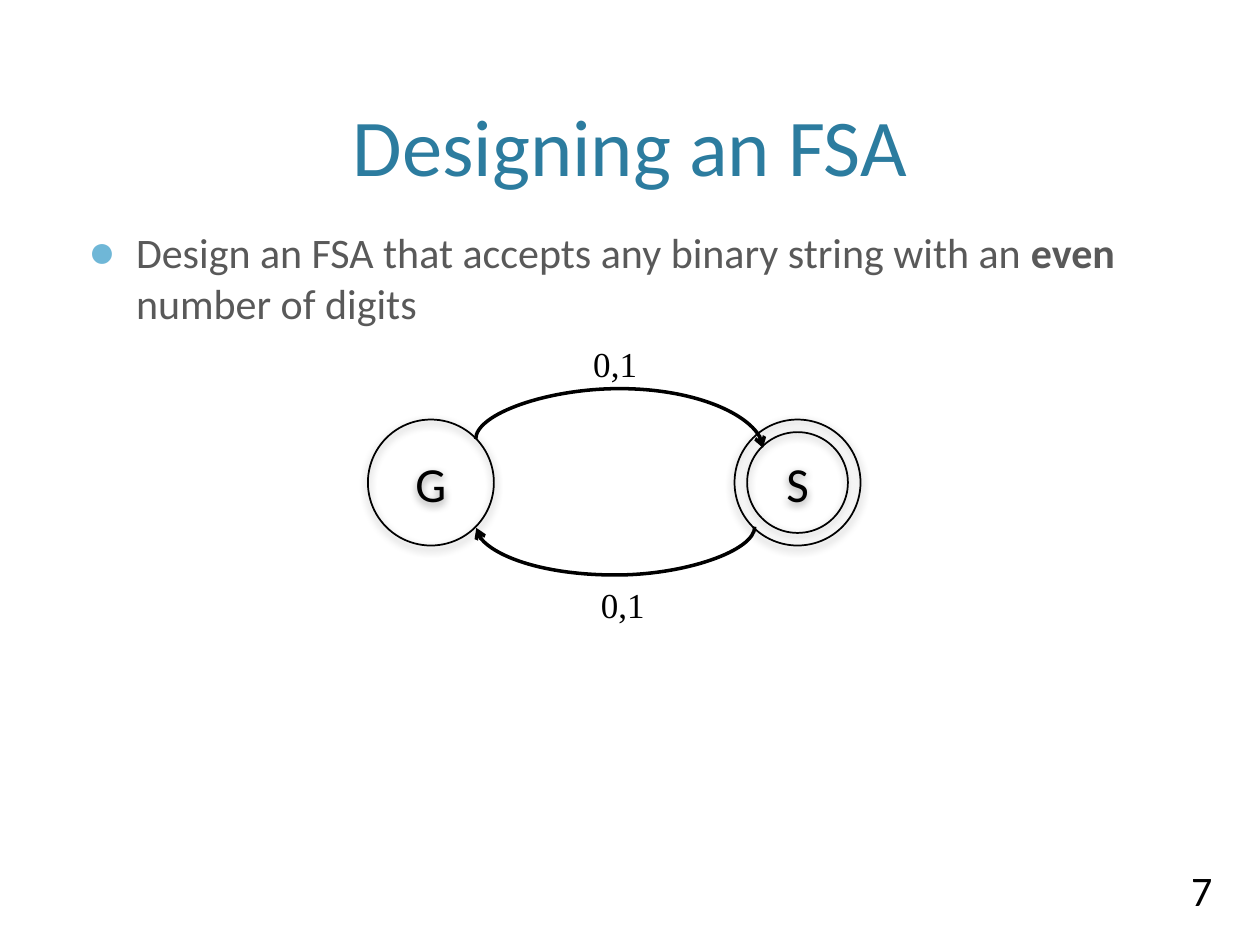
from lxml import etree
from pptx import Presentation
from pptx.dml.color import RGBColor
from pptx.enum.shapes import MSO_CONNECTOR, MSO_SHAPE
from pptx.enum.text import MSO_ANCHOR as ANCHOR, MSO_AUTO_SIZE as AUTO_SIZE, PP_ALIGN as ALIGN
from pptx.oxml.ns import qn
from pptx.util import Inches, Pt

BLACK = "000000"
GREY = "595959"
TITLE_BLUE = "2C7C9F"
BULLET_BLUE = "6FB7D7"


def rgb(value):
    return RGBColor.from_string(value)


def add_xml(parent, tag, **attrs):
    return etree.SubElement(parent, qn(tag), attrs)


def place(s, left, top, width, height):
    s.left, s.top = Inches(left), Inches(top)
    s.width, s.height = Inches(width), Inches(height)


def format_text(p, size, color=BLACK, font="Calibri", align=None):
    p.alignment = align
    for r in p.runs:
        r.font.size = Pt(size)
        r.font.name = font
        r.font.color.rgb = rgb(color)


def fill_title(s, text):
    place(s, 0.6, 0.12, 8.8, 1.46)
    tf = s.text_frame
    tf.text = text
    tf.vertical_anchor = ANCHOR.BOTTOM
    tf.auto_size = AUTO_SIZE.NONE
    format_text(tf.paragraphs[0], 46, TITLE_BLUE, align=ALIGN.CENTER)


def fill_body(s, parts):
    """Write one bulleted paragraph from (text, bold) parts."""
    place(s, 0.6, 1.75, 8.8, 1)
    s.text_frame.auto_size = AUTO_SIZE.NONE
    p = s.text_frame.paragraphs[0]
    for text, bold in parts:
        r = p.add_run()
        r.text = text
        r.font.bold = bold
    format_text(p, 24, GREY)
    p.space_before = Pt(20)
    pPr = p._p.get_or_add_pPr()
    pPr.set("marL", str(Inches(0.38)))
    pPr.set("indent", str(Inches(-0.38)))
    add_xml(add_xml(pPr, "a:buClr"), "a:srgbClr", val=BULLET_BLUE)
    add_xml(pPr, "a:buSzPct", val="110000")
    add_xml(pPr, "a:buChar", char="●")


def add_label(shapes, box, text, size, font="Calibri", align=None, wrap=False):
    tf = shapes.add_textbox(*map(Inches, box)).text_frame
    tf.text = text
    tf.word_wrap = wrap
    format_text(tf.paragraphs[0], size, font=font, align=align)
    return tf


def add_circle(shapes, left, top, diameter, text=""):
    s = shapes.add_shape(MSO_SHAPE.OVAL, *map(Inches, (left, top, diameter, diameter)))
    s.fill.background()
    s.line.color.rgb = rgb(BLACK)
    s.line.width = Pt(1)
    s.shadow.inherit = False
    effects = s._element.spPr.find(qn("a:effectLst"))
    shadow = add_xml(effects, "a:outerShdw", blurRad=str(Pt(5)), dist=str(Pt(2)),
                     dir="5400000", rotWithShape="0")
    add_xml(add_xml(shadow, "a:srgbClr", val=BLACK), "a:alpha", val="40000")
    tf = s.text_frame
    tf.text = text
    tf.word_wrap = True
    tf.vertical_anchor = ANCHOR.MIDDLE
    format_text(tf.paragraphs[0], 28, align=ALIGN.CENTER)


def add_accepting_state(shapes, left, top, text):
    group = shapes.add_group_shape()
    add_circle(group.shapes, left, top, 1)
    add_circle(group.shapes, left + 0.1, top + 0.1, 0.8, text)


def add_transition(shapes, box, rotation, bend, flip=False):
    """Draw a curved arrow in an unrotated box, bulging by bend inches."""
    left, top, width, height = box
    s = shapes.add_connector(MSO_CONNECTOR.CURVE, *map(
        Inches, (left, top, left + width, top + height)))
    s.line.color.rgb = rgb(BLACK)
    s.line.width = Pt(2)
    add_xml(s.line._get_or_add_ln(), "a:tailEnd", type="arrow")
    spPr = s._element.spPr
    add_xml(spPr, "a:effectLst")
    xfrm = spPr.find(qn("a:xfrm"))
    xfrm.set("rot", str(rotation * 60000))
    if flip:
        xfrm.set("flipH", "1")
    guides = spPr.find(qn("a:prstGeom")).get_or_add_avLst()
    add_xml(guides, "a:gd", name="adj1", fmla=f"val {round(bend / width * 100000)}")


def main():
    prs = Presentation()
    prs.slide_width, prs.slide_height = Inches(10), Inches(7.5)
    slide = prs.slides.add_slide(prs.slide_layouts[1])
    shapes = slide.shapes

    fill_title(shapes.title, "Designing an FSA")
    number = add_label(shapes, (8.64, 6.86, 1.08, 0.4), "7", 24, align=ALIGN.RIGHT, wrap=True)
    number.vertical_anchor = ANCHOR.MIDDLE
    fill_body(slide.placeholders[1], [
        ("Design an FSA that accepts any binary string with an ", False),
        ("even ", True),
        ("number of digits", False),
    ])

    add_circle(shapes, 2.92, 3.33, 1, "G")
    add_accepting_state(shapes, 5.83, 3.33, "S")
    add_transition(shapes, (4.88, 2.38, 0.07, 2.28), 270, -0.4, flip=True)
    add_transition(shapes, (4.88, 3.08, 0.01, 2.21), 90, 0.39)
    for left, top in ((4.61, 2.67), (4.67, 4.58)):
        add_label(shapes, (left, top, 0.55, 0.44), "0,1", 20, "Times New Roman")

    prs.save("out.pptx")


if __name__ == "__main__":
    main()
